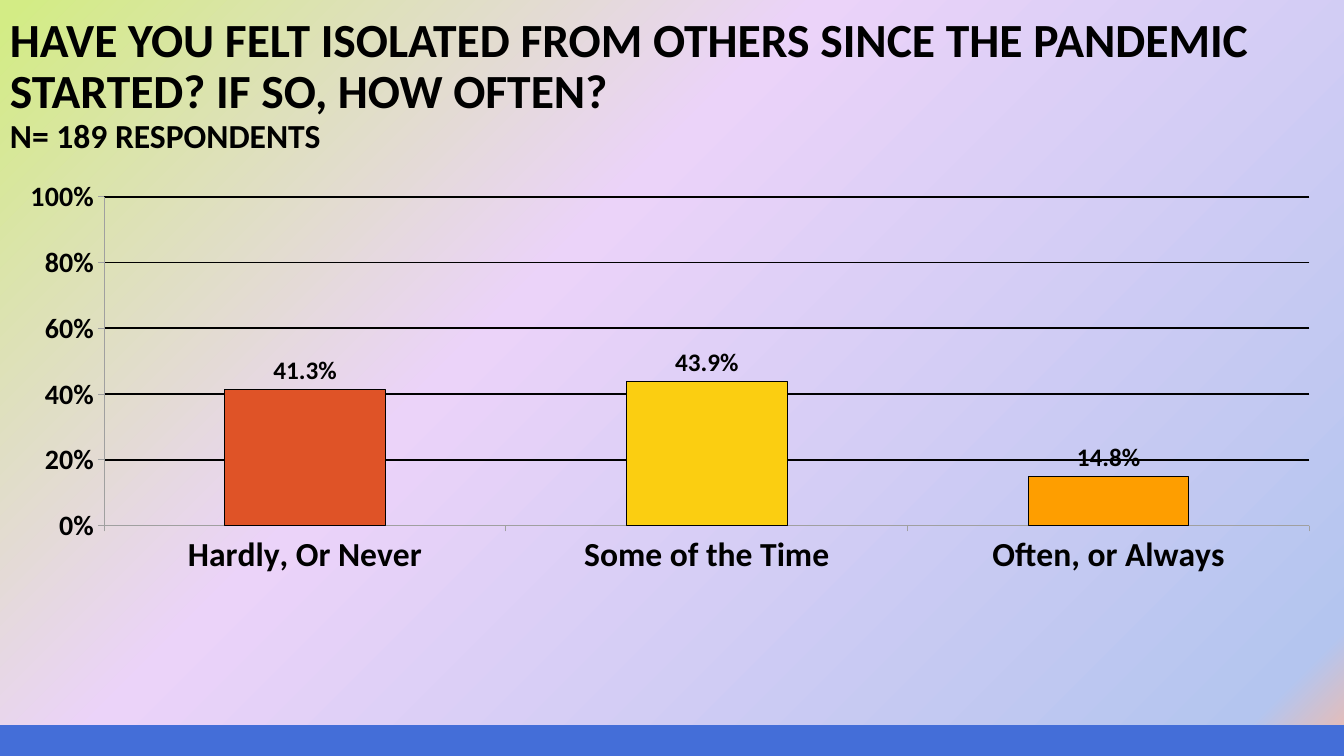
from copy import deepcopy

from lxml import etree
from pptx import Presentation
from pptx.chart.data import CategoryChartData as ChartData
from pptx.dml.color import RGBColor
from pptx.enum.chart import XL_CHART_TYPE as Kind, XL_LABEL_POSITION as Spot, XL_TICK_MARK as Tick
from pptx.enum.shapes import MSO_SHAPE as Shape
from pptx.enum.text import MSO_ANCHOR as Anchor
from pptx.oxml.ns import qn
from pptx.util import Pt

BLACK = RGBColor(0, 0, 0)
GRAY = RGBColor(0xA0, 0xA0, 0xA0)
BLUE = RGBColor(0x44, 0x6E, 0xD8)
BARS = [RGBColor(0xDF, 0x53, 0x27), RGBColor(0xFB, 0xCE, 0x11), RGBColor(0xFE, 0x9E, 0x00)]
STOPS = [
    (0.01, RGBColor(0xD3, 0xEC, 0x85)),
    (0.39, RGBColor(0xEB, 0xD3, 0xF9)),
    (0.94, RGBColor(0xB4, 0xC5, 0xEF)),
    (1, RGBColor(0xF2, 0xBA, 0xA9)),
]
FACE = "Calibri"


def style(font, size, color=BLACK, bold=True):
    font.name = FACE
    font.size = Pt(size)
    font.bold = bold
    font.color.rgb = color


def add_text(para, text, **fmt):
    run = para.add_run()
    run.text = text
    style(run.font, **fmt)


deck = Presentation()
deck.slide_width, deck.slide_height = Pt(960), Pt(540)
slide = deck.slides.add_slide(deck.slide_layouts[6])

# Diagonal background gradient
fill = slide.background.fill
fill.gradient()
fill.gradient_angle = 315
stops = slide.background._cSld.find(".//" + qn("a:gsLst"))
while len(stops) < len(STOPS):
    stops.append(deepcopy(stops[0]))
for stop, (pos, color) in zip(fill.gradient_stops, STOPS):
    stop.position = pos
    stop.color.rgb = color

# Footer band
band = slide.shapes.add_shape(Shape.RECTANGLE, 0, Pt(518.4), Pt(960), Pt(21.6))
band.shadow.inherit = False
band.fill.solid()
band.fill.fore_color.rgb = BLUE
band.line.color.rgb = BLUE
band.line.width = Pt(1)

# Title
frame = slide.shapes.add_textbox(0, Pt(24.5), Pt(960), Pt(90)).text_frame
frame.word_wrap = True
frame.vertical_anchor = Anchor.BOTTOM
para = frame.paragraphs[0]
para.line_spacing = 0.9
add_text(para, "HAVE YOU FELT ISOLATED FROM OTHERS SINCE THE PANDEMIC STARTED? IF SO, HOW OFTEN?", size=34)
para.add_line_break()
add_text(para, "N= 189 RESPONDENTS", size=24)

# Chart
data = ChartData(number_format="0.0%")
data.categories = ["Hardly, Or Never", "Some of the Time", "Often, or Always"]
data.add_series("Series 1", [0.413, 0.439, 0.148])
chart = slide.shapes.add_chart(
    Kind.COLUMN_CLUSTERED, Pt(19.4), Pt(114.5), Pt(916.6), Pt(368.6), data
).chart
chart.has_title = False
chart.has_legend = False
style(chart.font, 18, bold=False)

plot = chart.plots[0]
plot.gap_width = 150
plot.vary_by_categories = False
series = plot.series[0]
for i, color in enumerate(BARS):
    bar = series.points[i].format
    bar.fill.solid()
    bar.fill.fore_color.rgb = color
    bar.line.color.rgb = BLACK
    bar.line.width = Pt(0.75)

labels = series.data_labels
labels.show_value = True
labels.number_format = "0.0%"
labels.number_format_is_linked = False
labels.position = Spot.OUTSIDE_END
style(labels.font, 18)

for axis, size in (chart.category_axis, 24), (chart.value_axis, 20):
    axis.major_tick_mark = Tick.OUTSIDE
    axis.minor_tick_mark = Tick.NONE
    axis.format.line.color.rgb = GRAY
    axis.format.line.width = Pt(0.75)
    style(axis.tick_labels.font, size)

scale = chart.value_axis
scale.minimum_scale, scale.maximum_scale, scale.major_unit = 0, 1, 0.2
scale.tick_labels.number_format = "0%"
scale.tick_labels.number_format_is_linked = False
grid = scale.major_gridlines.format.line
grid.color.rgb = BLACK
grid.width = Pt(1.25)

# Fixed inner plot area, as shares of the chart frame
area = chart._chartSpace.find(".//" + qn("c:plotArea"))
for old in area.findall(qn("c:layout")):
    area.remove(old)
layout = etree.Element(qn("c:layout"))
inner = etree.SubElement(layout, qn("c:manualLayout"))
for tag, val in [
    ("layoutTarget", "inner"), ("xMode", "edge"), ("yMode", "edge"),
    ("x", 0.067), ("y", 0.071), ("w", 0.94), ("h", 0.637),
]:
    etree.SubElement(inner, qn("c:" + tag)).set("val", str(val))
area.insert(0, layout)

deck.save("out.pptx")
